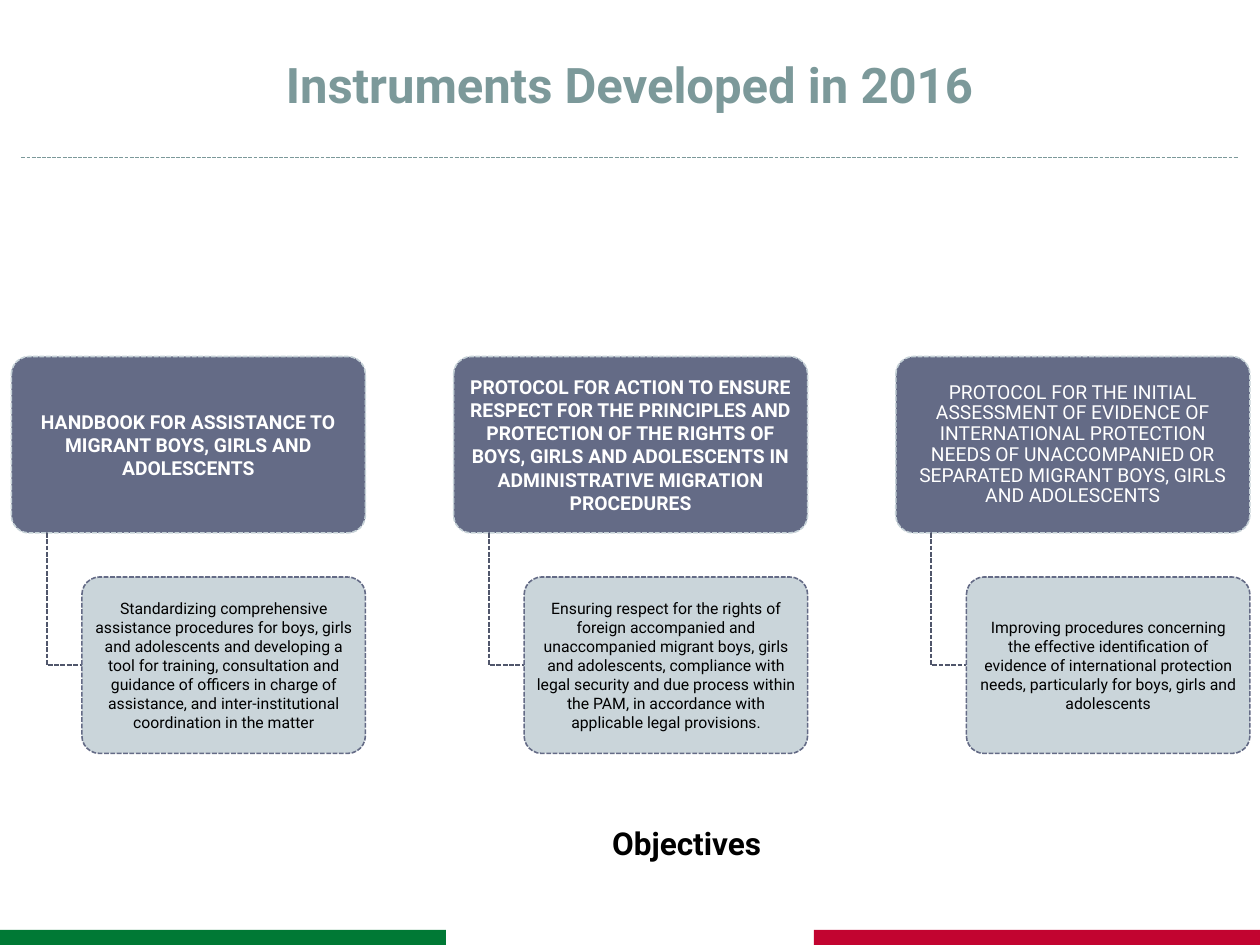
"""Build a slide pairing three instruments of 2016 with their objectives."""
from dataclasses import dataclass
from typing import Any

from lxml import etree
from pptx import Presentation
from pptx import util as u
from pptx.dml.color import RGBColor
from pptx.enum import dml, shapes, text
from pptx.oxml import ns

COLORS = {
    "title": "7C999A", "green": "007935", "red": "C20430", "slate": "646B86",
    "mist": "C5D1D7", "elbow": "50566B", "white": "FFFFFF", "black": "000000",
}
FONT = "Roboto"
CARD_TOP, GOAL_TOP, CARD_H = 2.83, 4.58, 1.4
CARD_W, GOAL_W = 2.81, 2.25
LEFT, PITCH = 0.09, 3.51


@dataclass
class Instrument:
    """An instrument with its objective."""
    name: str
    goal: str
    bold: bool = True
    spacing: float = 1.0


INSTRUMENTS = [
    Instrument(
        "HANDBOOK FOR ASSISTANCE TO MIGRANT BOYS, GIRLS AND ADOLESCENTS",
        "Standardizing comprehensive assistance procedures for boys, girls and "
        "adolescents and developing a tool for training, consultation and guidance of "
        "officers in charge of assistance, and inter-institutional coordination in the matter",
    ),
    Instrument(
        "PROTOCOL FOR ACTION TO ENSURE RESPECT FOR THE PRINCIPLES AND PROTECTION OF THE "
        "RIGHTS OF BOYS, GIRLS AND ADOLESCENTS IN ADMINISTRATIVE MIGRATION PROCEDURES",
        "Ensuring respect for the rights of foreign accompanied and unaccompanied migrant "
        "boys, girls and adolescents, compliance with legal security and due process within "
        "the PAM, in accordance with applicable legal provisions.",
    ),
    Instrument(
        "PROTOCOL FOR THE INITIAL ASSESSMENT OF EVIDENCE OF INTERNATIONAL PROTECTION NEEDS "
        "OF UNACCOMPANIED OR SEPARATED MIGRANT BOYS, GIRLS AND ADOLESCENTS",
        "Improving procedures concerning the effective identification of evidence of "
        "international protection needs, particularly for boys, girls and adolescents",
        bold=False, spacing=0.9,
    ),
]


def rgb(name: str) -> RGBColor:
    """Look up a named colour."""
    return RGBColor.from_string(COLORS[name])


def set_attrs(target: Any, values: dict[str, Any]) -> None:
    """Set every attribute in a dict of format values."""
    for key, value in values.items():
        setattr(target, key, value)


def write(tf: Any, words: str, size: float, color: str, bold: bool,
          align: Any = text.PP_ALIGN.CENTER, spacing: float = 1.0) -> None:
    """Write one formatted paragraph into a text frame."""
    p = tf.paragraphs[0]
    set_attrs(p, {"alignment": align, "line_spacing": spacing})
    r = p.add_run()
    r.text = words
    set_attrs(r.font, {"name": FONT, "size": u.Pt(size), "bold": bold})
    r.font.color.rgb = rgb(color)


def dash_line(line: Any, color: str, width: float = 0.9) -> None:
    """Give a line its dashed style."""
    line.color.rgb = rgb(color)
    set_attrs(line, {"width": u.Pt(width), "dash_style": dml.MSO_LINE.SQUARE_DOT})


def add_band(s: Any, left: float, color: str) -> None:
    """Add a coloured band at the foot of the slide."""
    sp = s.shapes.add_shape(shapes.MSO_SHAPE.RECTANGLE, u.Inches(left), u.Inches(7.38),
                            u.Inches(3.54), u.Inches(0.12))
    sp.shadow.inherit = False
    sp.fill.solid()
    sp.fill.fore_color.rgb = rgb(color)
    sp.line.fill.background()


def add_rule(s: Any) -> None:
    """Add the dashed rule under the title."""
    line = s.shapes.add_connector(shapes.MSO_CONNECTOR.STRAIGHT, u.Inches(0.17),
                                  u.Inches(1.25), u.Inches(9.83), u.Inches(1.25))
    dash_line(line.line, "title", 0.75)
    etree.SubElement(line._element.spPr, ns.qn("a:effectLst"))


def add_card(s: Any, left: float, top: float, width: float, fill: str, line: str) -> Any:
    """Add a rounded card and return it."""
    sp = s.shapes.add_shape(shapes.MSO_SHAPE.ROUNDED_RECTANGLE, u.Inches(left),
                            u.Inches(top), u.Inches(width), u.Inches(CARD_H))
    sp.adjustments[0] = 0.1
    sp.shadow.inherit = False
    sp.fill.solid()
    sp.fill.fore_color.rgb = rgb(fill)
    dash_line(sp.line, line)
    margin = u.Inches(0.06)
    set_attrs(sp.text_frame, {
        "word_wrap": True, "vertical_anchor": text.MSO_ANCHOR.MIDDLE,
        "margin_left": margin, "margin_right": margin,
        "margin_top": u.Inches(0.05), "margin_bottom": u.Inches(0.05),
    })
    return sp


def add_elbow(s: Any, x: float, goal_left: float) -> None:
    """Add the elbow line from an instrument to its objective."""
    y = CARD_TOP + CARD_H
    middle = GOAL_TOP + CARD_H / 2
    fb = s.shapes.build_freeform(u.Inches(x), u.Inches(y))
    fb.add_line_segments([(u.Inches(x), u.Inches(middle)),
                          (u.Inches(goal_left), u.Inches(middle))], close=False)
    sp = fb.convert_to_shape()
    sp.shadow.inherit = False
    sp.fill.background()
    dash_line(sp.line, "elbow")


def add_instrument(s: Any, left: float, item: Instrument) -> None:
    """Add an instrument card, its elbow and its objective card."""
    card = add_card(s, left, CARD_TOP, CARD_W, "slate", "mist")
    write(card.text_frame, item.name, 11, "white", item.bold, spacing=item.spacing)
    goal_left = left + CARD_W - GOAL_W
    add_elbow(s, left + CARD_W / 10, goal_left)
    goal = add_card(s, goal_left, GOAL_TOP, GOAL_W, "mist", "slate")
    color = goal._element.spPr.find(ns.qn("a:solidFill"))[0]
    etree.SubElement(color, ns.qn("a:alpha"), val="90000")
    write(goal.text_frame, item.goal, 9, "black", False)


def main() -> None:
    """Build and save the slide."""
    prs = Presentation()
    set_attrs(prs, {"slide_width": u.Inches(10), "slide_height": u.Inches(7.5)})
    s = prs.slides.add_slide(prs.slide_layouts[5])
    title = s.shapes.title
    set_attrs(title, {"left": u.Inches(0.33), "top": u.Inches(0.25),
                      "width": u.Inches(9.33), "height": u.Inches(0.83)})
    title.text_frame.vertical_anchor = text.MSO_ANCHOR.MIDDLE
    write(title.text_frame, "Instruments Developed in 2016", 28, "title", True)
    add_band(s, 0, "green")
    add_rule(s)
    add_band(s, 6.46, "red")
    for i, item in enumerate(INSTRUMENTS):
        add_instrument(s, LEFT + i * PITCH, item)
    label = s.shapes.add_textbox(u.Inches(4.76), u.Inches(6.49), u.Inches(1.48), u.Inches(0.4))
    set_attrs(label.text_frame, {"word_wrap": False,
                                 "auto_size": text.MSO_AUTO_SIZE.SHAPE_TO_FIT_TEXT})
    write(label.text_frame, "Objectives", 18, "black", True, text.PP_ALIGN.LEFT)
    prs.save("out.pptx")


if __name__ == "__main__":
    main()
